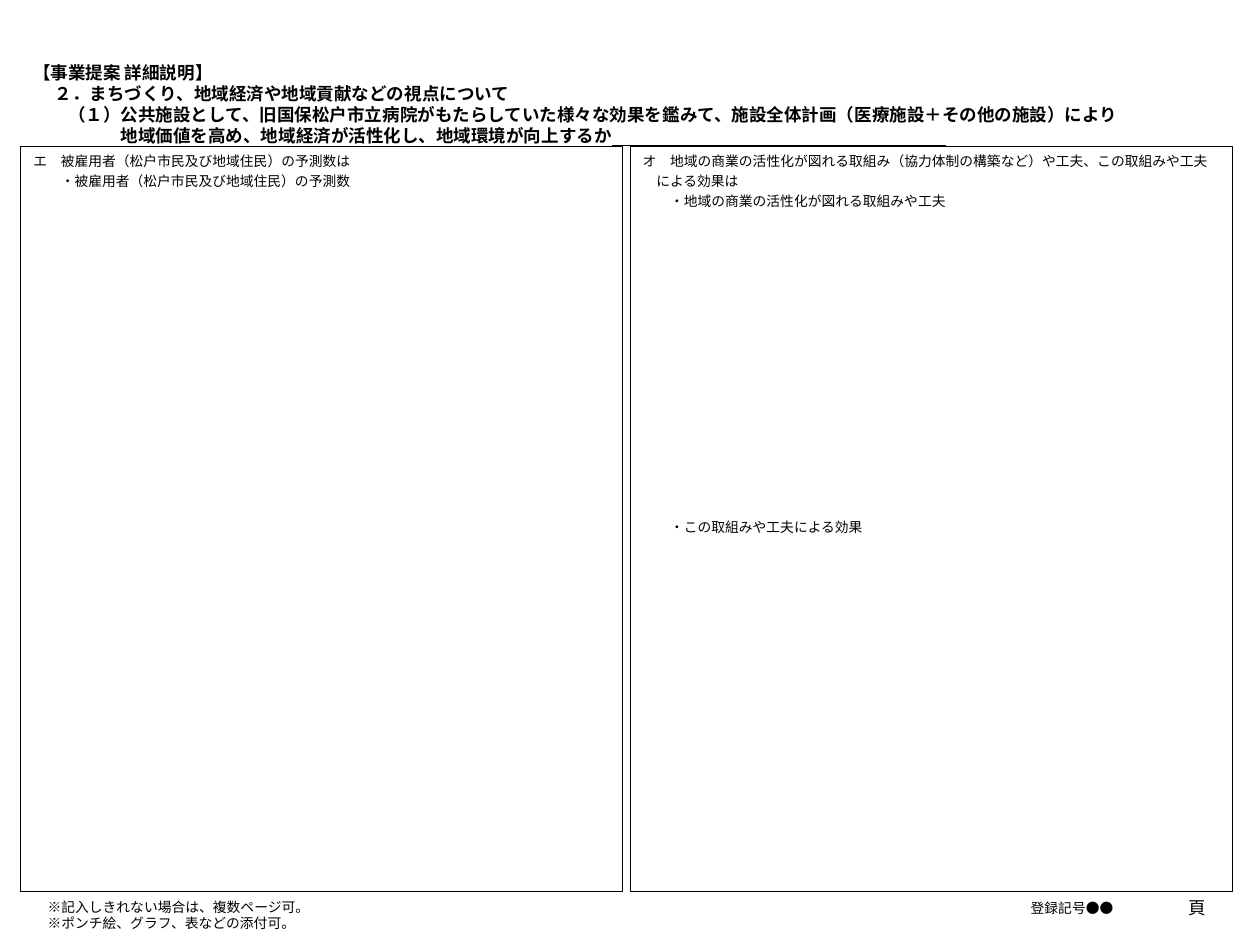
from lxml import etree
from pptx import Presentation
from pptx.dml.color import RGBColor
from pptx.enum.text import MSO_ANCHOR, MSO_AUTO_SIZE, PP_ALIGN
from pptx.oxml.ns import qn
from pptx.util import Pt

LEFT, RIGHT = PP_ALIGN.LEFT, PP_ALIGN.RIGHT
TOP, MIDDLE = MSO_ANCHOR.TOP, MSO_ANCHOR.MIDDLE
NO_FIT = MSO_AUTO_SIZE.NONE
TWO_CONTENT = 3

FONT = "Noto Sans CJK JP"
COLORS = {"ink": "000000"}
INSETS = {"margin_left": 10, "margin_right": 10, "margin_top": 5, "margin_bottom": 5}

# Each line: text, left indent, space before
HEADING = [
    ("【事業提案 詳細説明】", 0, 0),
    ("２．まちづくり、地域経済や地域貢献などの視点について", 17, 0),
    ("（１）公共施設として、旧国保松戸市立病院がもたらしていた様々な効果を鑑みて、"
     "施設全体計画（医療施設＋その他の施設）により", 28, 0),
    ("地域価値を高め、地域経済が活性化し、地域環境が向上するか", 70, 0),
]
ANSWER_BLANK = "\u3000" * 19
EMPLOYMENT = [
    ("エ　被雇用者（松戸市民及び地域住民）の予測数は", 0, 2.2),
    ("・被雇用者（松戸市民及び地域住民）の予測数", 22, 2.2),
]
COMMERCE = [
    ("オ　地域の商業の活性化が図れる取組み（協力体制の構築など）や工夫、この取組みや工夫", 0, 2.2),
    ("による効果は", 11, 2.2),
    ("・地域の商業の活性化が図れる取組みや工夫", 22, 2.2),
    ("・この取組みや工夫による効果", 22, 248),
]
NOTES = [
    ("※記入しきれない場合は、複数ページ可。", 0, 0),
    ("※ポンチ絵、グラフ、表などの添付可。", 0, 0),
]
REGISTRATION = [("登録記号●●", 0, 0)]
PAGE_LABEL = [("頁", 0, 0)]

PANEL_LEFT, PANEL_TOP, PANEL_WIDTH, PANEL_HEIGHT = 16.6, 117.4, 481.7, 595.4
PANEL_GAP = 5.7
FOOTER_TOP, FOOTER_HEIGHT = 706.3, 40.3


def place(shape, left, top, width, height):
    box = {"left": left, "top": top, "width": width, "height": height}
    for side, value in box.items():
        setattr(shape, side, Pt(value))


def style_run(run, size, bold, underline=False):
    look = {"name": FONT, "size": Pt(size), "bold": bold, "underline": underline}
    for key, value in look.items():
        setattr(run.font, key, value)
    run.font.color.rgb = RGBColor.from_string(COLORS["ink"])
    east_asian = etree.Element(qn("a:ea"), typeface=FONT)
    run.font._element.find(qn("a:latin")).addnext(east_asian)


def write(shape, lines, size=11, pitch=12.8, align=LEFT, anchor=TOP, bold=False):
    """Fill the shape with unbulleted lines at a fixed line pitch."""
    frame = shape.text_frame
    frame.word_wrap = True
    frame.auto_size = NO_FIT
    frame.vertical_anchor = anchor
    for side, value in INSETS.items():
        setattr(frame, side, Pt(value))
    for number, (text, indent, before) in enumerate(lines):
        paragraph = frame.add_paragraph() if number else frame.paragraphs[0]
        layout = {"alignment": align, "line_spacing": Pt(pitch),
                  "space_before": Pt(before), "space_after": Pt(0)}
        for key, value in layout.items():
            setattr(paragraph, key, value)
        properties = paragraph._p.get_or_add_pPr()
        properties.set("marL", str(Pt(indent)))
        properties.set("indent", "0")
        etree.SubElement(properties, qn("a:buNone"))
        run = paragraph.add_run()
        run.text = text
        style_run(run, size, bold)
    return frame


def main():
    deck = Presentation()
    deck.slide_width, deck.slide_height = Pt(1008), Pt(756)
    slide = deck.slides.add_slide(deck.slide_layouts[TWO_CONTENT])
    spots = {spot.placeholder_format.idx: spot for spot in slide.placeholders}

    heading = spots[0]
    place(heading, PANEL_LEFT, 43.2, 964, 79.2)
    frame = write(heading, HEADING, size=14, pitch=16.8, bold=True)
    frame.margin_top = Pt(6.5)
    blank = frame.paragraphs[-1].add_run()
    blank.text = ANSWER_BLANK
    style_run(blank, 14, True, underline=True)

    for column, lines in enumerate((EMPLOYMENT, COMMERCE)):
        panel = spots[column + 1]
        left = PANEL_LEFT + column * (PANEL_WIDTH + PANEL_GAP)
        place(panel, left, PANEL_TOP, PANEL_WIDTH, PANEL_HEIGHT)
        panel.line.color.rgb = RGBColor.from_string(COLORS["ink"])
        panel.line.width = Pt(0.75)
        write(panel, lines, pitch=13.4)

    footers = [
        (REGISTRATION, 581.8, FOOTER_TOP, 319, 11, RIGHT),
        (NOTES, 28.1, FOOTER_TOP + 5.8, 499, 11, LEFT),
        (PAGE_LABEL, 918, FOOTER_TOP, 56.9, 14, RIGHT),
    ]
    for lines, left, top, width, size, align in footers:
        footer = slide.shapes.add_textbox(Pt(left), Pt(top), Pt(width), Pt(FOOTER_HEIGHT))
        write(footer, lines, size=size, pitch=size * 1.16, align=align, anchor=MIDDLE)

    for index, spot in spots.items():
        if index > 2:
            spot._element.getparent().remove(spot._element)

    deck.save("out.pptx")


if __name__ == "__main__":
    main()
